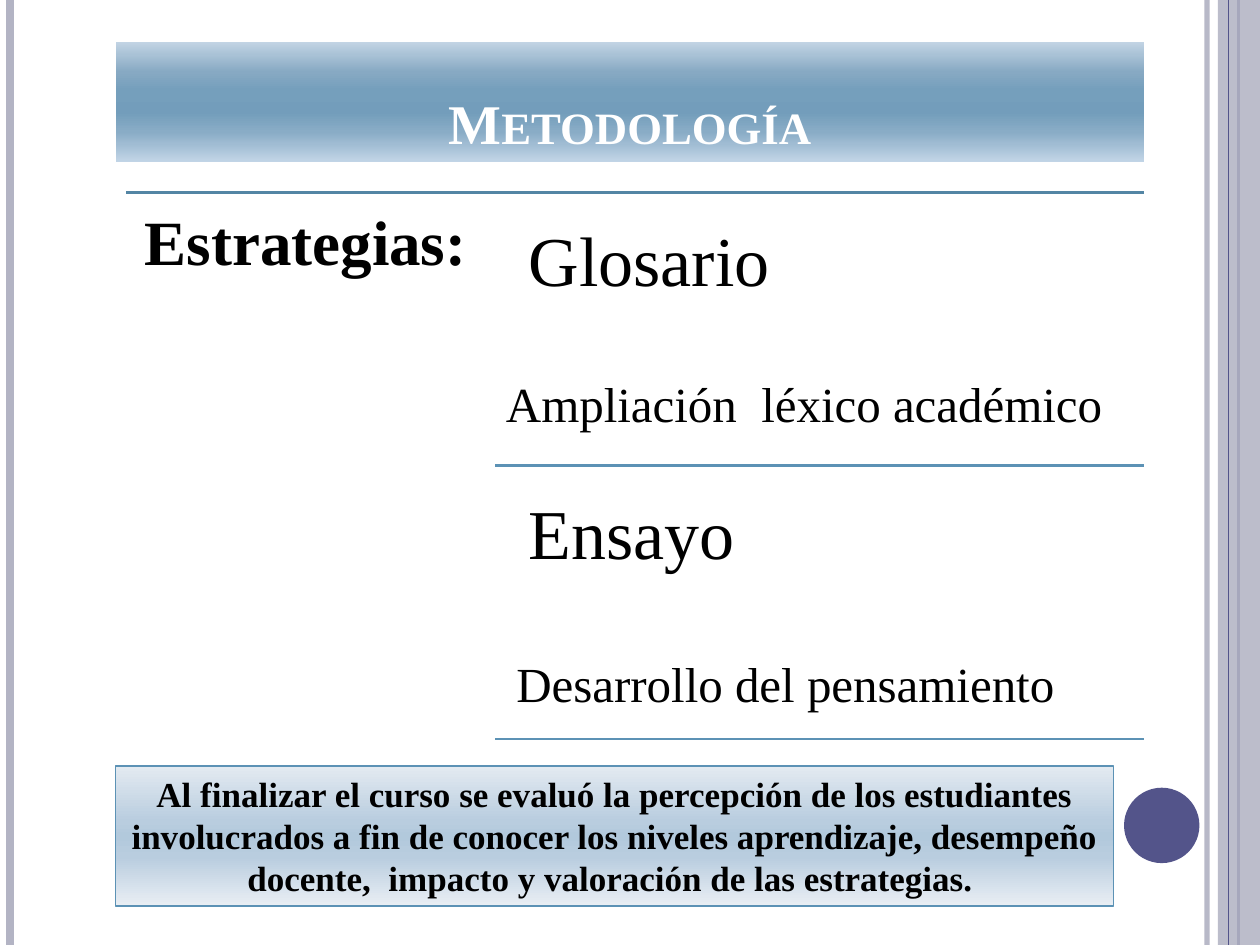
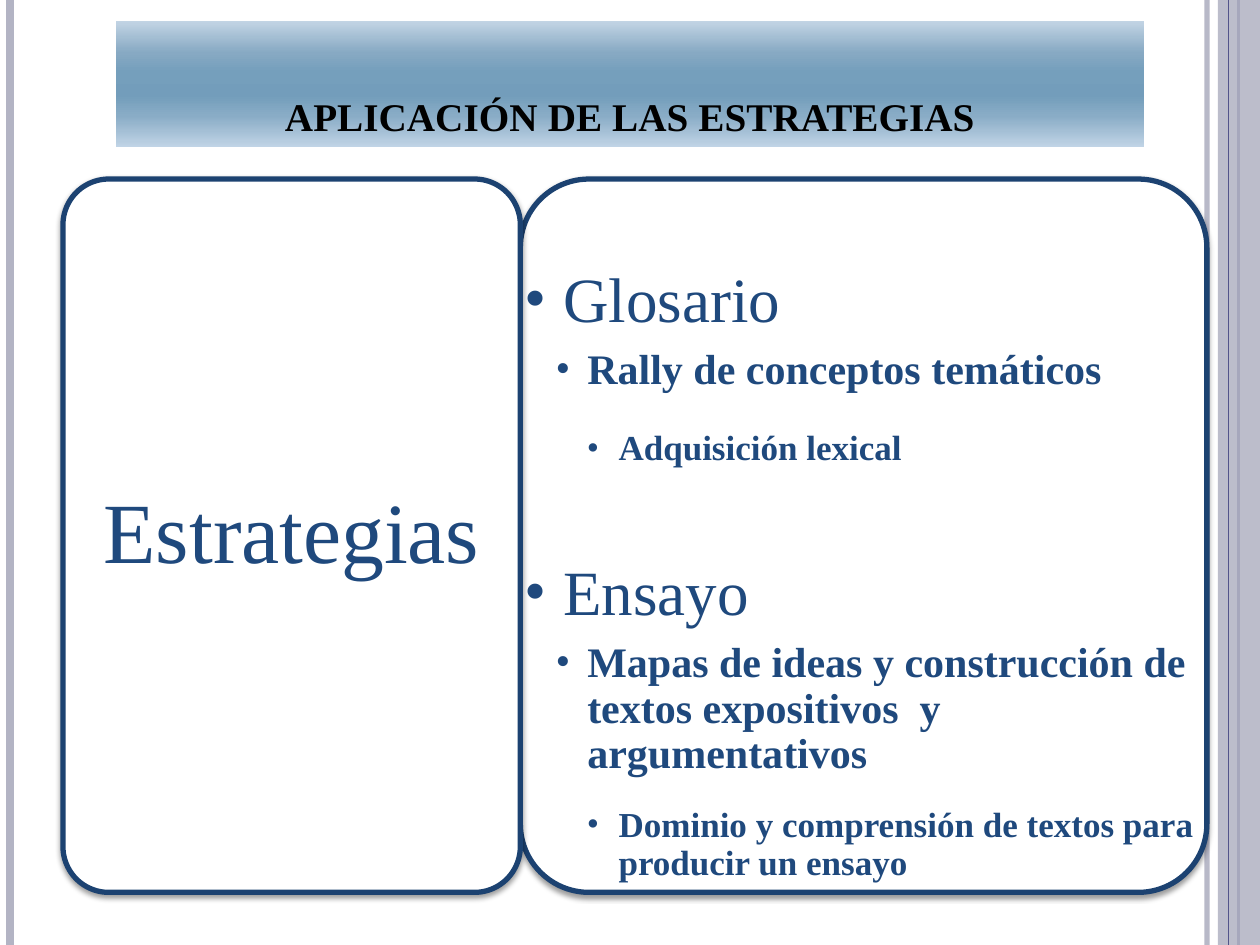
from lxml import etree
from pptx import Presentation
from pptx.dml.color import RGBColor
from pptx.enum.shapes import MSO_CONNECTOR, MSO_SHAPE
from pptx.enum.text import MSO_ANCHOR, PP_ALIGN
from pptx.oxml import parse_xml
from pptx.oxml.ns import nsdecls, qn
from pptx.util import Cm, Pt

STRAIGHT = MSO_CONNECTOR.STRAIGHT
RECT, ROUND, OVAL = MSO_SHAPE.RECTANGLE, MSO_SHAPE.ROUNDED_RECTANGLE, MSO_SHAPE.OVAL
TOP, MIDDLE, BOTTOM = MSO_ANCHOR.TOP, MSO_ANCHOR.MIDDLE, MSO_ANCHOR.BOTTOM
LEFT, CENTER = PP_ALIGN.LEFT, PP_ALIGN.CENTER

WIDE, HIGH = 25.4, 19.05
FONT = "Times New Roman"
HUES = {
    "mist": "B3B4C4", "violet": "53548A", "white": "FFFFFF", "black": "000000",
    "rule": "5385A4", "steel": "5C92B5", "navy": "1C4271", "ink": "1F497D",
}
BAND = [(0, "C2D4E4"), (25, "87A9C3"), (40, "759FBC"), (50, "739DBB"),
        (60, "759FBC"), (75, "89ACC6"), (100, "C1D4E6")]
PALE = [(0, "E3EAF1"), (40, "B9CDDF"), (50, "B2C9DC"), (65, "B9CDDF"), (100, "E9EEF4")]
INSET = (0.25, 0.13, 0.25, 0.13)


def hue(name):
    return RGBColor.from_string(HUES[name])


def fade(parent, alpha):
    """Make the solid fill below parent partly transparent."""
    color = next(parent.iter(qn("a:srgbClr")))
    etree.SubElement(color, qn("a:alpha"), val=str(alpha * 1000))


def line(slide, start, end, color, width):
    rule = slide.shapes.add_connector(STRAIGHT, *map(Cm, start + end))
    rule.line.color.rgb = hue(color)
    rule.line.width = Pt(width)
    etree.SubElement(rule._element.spPr, qn("a:effectLst"))
    return rule


def block(slide, kind, box, color=None, edge=None, width=1, stops=None):
    shape = slide.shapes.add_shape(kind, *map(Cm, box))
    shape.shadow.inherit = False
    if stops:
        blend(shape, stops)
    else:
        shape.fill.solid()
        shape.fill.fore_color.rgb = hue(color)
    if edge:
        shape.line.color.rgb = hue(edge)
        shape.line.width = Pt(width)
    else:
        shape.line.fill.background()
    return shape


def blend(shape, stops):
    """Fill from top to bottom with the given (percent, hex) stops."""
    shape.fill.gradient()
    shape.fill.gradient_angle = 270
    holder = next(shape._element.spPr.iter(qn("a:gsLst")))
    for old in list(holder):
        holder.remove(old)
    for place, color in stops:
        stop = etree.SubElement(holder, qn("a:gs"), pos=str(place * 1000))
        etree.SubElement(stop, qn("a:srgbClr"), val=color)


def style(para, size, color, bold=False, align=LEFT, space=None):
    para.alignment = align
    if space:
        para.line_spacing = space
    for run in para.runs:
        run.font.name = FONT
        run.font.size = Pt(size)
        run.font.bold = bold
        run.font.color.rgb = hue(color)


def frame(shape, anchor=TOP, inset=INSET):
    body = shape.text_frame
    body.word_wrap = True
    body.vertical_anchor = anchor
    (body.margin_left, body.margin_top,
     body.margin_right, body.margin_bottom) = map(Cm, inset)
    return body


def write(shape, text, size, color, anchor=TOP, inset=INSET, **look):
    body = frame(shape, anchor, inset)
    body.text = text
    style(body.paragraphs[0], size, color, **look)


def label(slide, box, text, size, color, **look):
    write(slide.shapes.add_textbox(*map(Cm, box)), text, size, color, **look)


def edges(slide):
    """Draw the stripes that run down both sides of each slide."""
    def stripe(x, color, width):
        return line(slide, (x, 0), (x, HIGH), color, width)

    fade(stripe(24.33, "mist", 3)._element.spPr, 93)
    stripe(0.21, "mist", 4.5)
    stripe(24.97, "violet", 1.5)
    panel = block(slide, RECT, (24.55, 0, WIDE - 24.55, HIGH), "mist")
    fade(panel._element.spPr, 87)
    stripe(24.76, "violet", 0.75)


def title(slide, box, text, size, color):
    band = block(slide, RECT, box, stops=BAND)
    write(band, text, size, color, anchor=BOTTOM, bold=True, align=CENTER)
    for run in band.text_frame.paragraphs[0].runs:
        run._r.get_or_add_rPr().set("cap", "small")


def scheme(slide, box, head, items):
    """List items in equal rows, each closed by a rule, beside a heading."""
    x, y, w, h = box
    side, gap = 7.44, 0.25
    line(slide, (x, y), (x + w, y), "rule", 1.5)
    label(slide, (x, y, side, h), head, 36, "black", inset=(0.38,) * 4,
          bold=True, space=0.9)
    step = (h - gap) / len(items)
    for row, (name, note, shift, drop) in enumerate(items):
        top = y + gap + row * step
        left = x + side
        label(slide, (left + gap, top, w - side - gap, step - gap), name, 40,
              "black", inset=(0.43,) * 4, space=0.9)
        line(slide, (left, top + step - gap), (x + w, top + step - gap), "steel", 1.5)
        label(slide, (left + shift, top + drop, 13.5, 1.45), note, 28, "black")


def closing(slide, box, text):
    note = block(slide, RECT, box, edge="steel", width=0.94, stops=PALE)
    write(note, text, 20, "black", bold=True, align=CENTER)


def card(slide, box):
    shape = block(slide, ROUND, box, "white", "navy", 3)
    shape.adjustments[0] = 0.1
    old = shape._element.spPr.find(qn("a:effectLst"))
    old.append(parse_xml(
        f'<a:outerShdw {nsdecls("a")} blurRad="{Pt(3.1)}" dist="{Pt(1.6)}" dir="5400000" '
        f'rotWithShape="0"><a:srgbClr val="{HUES["black"]}"><a:alpha val="38000"/>'
        '</a:srgbClr></a:outerShdw>'))


def bullet(para, left, hang):
    props = para._p.get_or_add_pPr()
    props.set("marL", str(Cm(left)))
    props.set("indent", str(-Cm(hang)))
    etree.SubElement(props, qn("a:buFont"), typeface=FONT)
    etree.SubElement(props, qn("a:buChar"), char="•")


def outline(slide, box, items):
    """Write a bulleted list in a card: (level, text, space before)."""
    looks = [(36, False, 0.79, 0.79), (24, True, 1.27, 0.64), (20, True, 1.9, 0.64)]
    card(slide, box)
    body = frame(slide.shapes.add_textbox(*map(Cm, box)), inset=(0.08, 1.8, 0.08, 0.08))
    for row, (level, text, before) in enumerate(items):
        para = body.add_paragraph() if row else body.paragraphs[0]
        size, bold, left, hang = looks[level]
        para.text = text
        para.level = level
        para.space_before = Pt(before)
        para.space_after = Pt(0)
        style(para, size, "ink", bold, space=0.9)
        bullet(para, left, hang)


def topic(slide, box, text):
    card(slide, box)
    label(slide, box, text, 49, "ink", anchor=MIDDLE, inset=(0.5, 0.25, 0.5, 0.25),
          align=CENTER, space=0.9)


def method(slide):
    edges(slide)
    block(slide, OVAL, (22.66, 15.88, 1.52, 1.52), "violet")
    title(slide, (2.33, 0.85, 20.74, 2.41), "Metodología", 32, "white")
    scheme(slide, (2.54, 3.88, 20.53, 11.27), "Estrategias:", [
        ("Glosario", "Ampliación  léxico académico", -0.03, 3.26),
        ("Ensayo", "Desarrollo del pensamiento", 0.18, 3.41),
    ])
    closing(slide, (2.33, 15.44, 20.12, 2.82),
            "Al finalizar el curso se evaluó la percepción de los estudiantes "
            "involucrados a fin de conocer los niveles aprendizaje, desempeño "
            "docente,  impacto y valoración de las estrategias. ")


def applied(slide):
    edges(slide)
    title(slide, (2.33, 0.43, 20.74, 2.54), "aplicación de las estrategias", 28, "black")
    left, top, high, split = 1.27, 3.61, 14.38, 10.49
    outline(slide, (split, top, 13.84, high), [
        (0, "Glosario", 0),
        (1, "Rally de conceptos temáticos", 7),
        (2, "Adquisición lexical", 21),
        (0, "Ensayo", 53),
        (1, "Mapas de ideas y construcción de textos expositivos  y argumentativos", 7),
        (2, "Dominio y comprensión de textos para producir un ensayo", 17),
    ])
    topic(slide, (left, top, split - left, high), "Estrategias")


def main():
    deck = Presentation()
    deck.slide_width, deck.slide_height = Cm(WIDE), Cm(HIGH)
    for draw in (method, applied):
        draw(deck.slides.add_slide(deck.slide_layouts[6]))
    deck.save("out.pptx")


if __name__ == "__main__":
    main()
